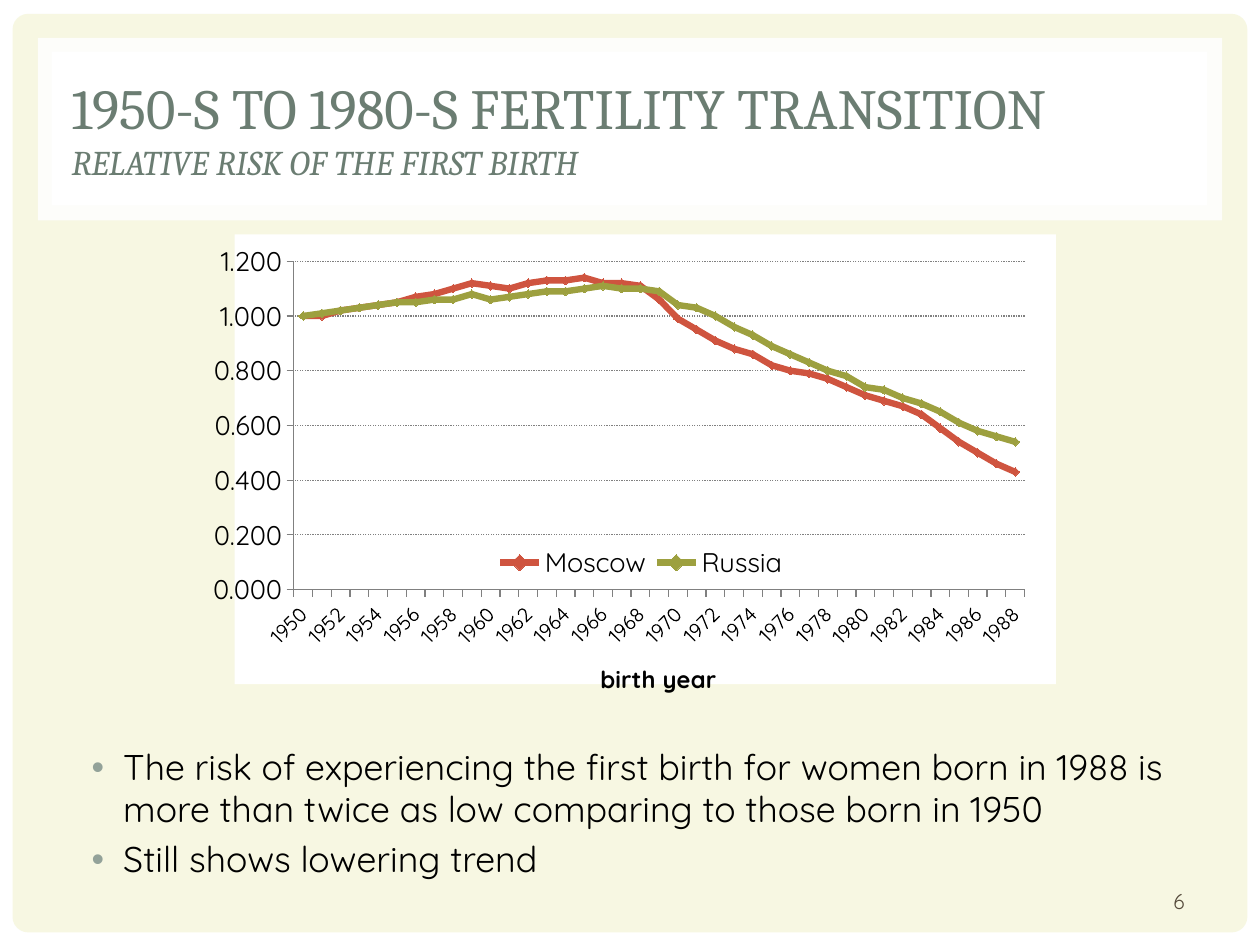
from lxml import etree
from pptx import Presentation
from pptx.chart.data import CategoryChartData
from pptx.dml.color import RGBColor
from pptx.enum.chart import XL_CHART_TYPE as ChartType, XL_LEGEND_POSITION as LegendPosition
from pptx.enum.chart import XL_MARKER_STYLE as Marker, XL_TICK_MARK as Tick
from pptx.enum.dml import MSO_LINE as Dash
from pptx.enum.shapes import MSO_SHAPE as Shape
from pptx.enum.text import MSO_ANCHOR as Anchor, PP_ALIGN as Align
from pptx.oxml import parse_xml
from pptx.oxml.ns import nsdecls, qn
from pptx.util import Inches, Pt

COLORS = {
    "white": "FFFFFF", "cream": "F2F3D0", "heading": "6B7D72", "text": "000000",
    "bullet": "93A299", "number": "564B3C", "grid": "808080",
    "Moscow": "CF543F", "Russia": "9DA03F",
}
HEADING_FONT, BODY_FONT = "Cambria", "Quicksand"
BIRTH_YEARS = [float(year) for year in range(1950, 1989)]
RISKS = {
    "Moscow": [1, 1, 1.02, 1.03, 1.04, 1.05, 1.07, 1.08, 1.1, 1.12, 1.11, 1.1, 1.12,
               1.13, 1.13, 1.14, 1.12, 1.12, 1.11, 1.06, 0.99, 0.95, 0.91, 0.88, 0.86,
               0.82, 0.8, 0.79, 0.77, 0.74, 0.71, 0.69, 0.67, 0.64, 0.59, 0.54, 0.5,
               0.46, 0.43],
    "Russia": [1, 1.01, 1.02, 1.03, 1.04, 1.05, 1.05, 1.06, 1.06, 1.08, 1.06, 1.07, 1.08,
               1.09, 1.09, 1.1, 1.11, 1.1, 1.1, 1.09, 1.04, 1.03, 1, 0.96, 0.93, 0.89,
               0.86, 0.83, 0.8, 0.78, 0.74, 0.73, 0.7, 0.68, 0.65, 0.61, 0.58, 0.56, 0.54],
}
FINDINGS = [
    "The risk of experiencing the first birth for women born in 1988 is "
    "more than twice as low comparing to those born in 1950",
    "Still shows lowering trend",
]


def rgb(name):
    """Return the named colour."""
    return RGBColor.from_string(COLORS[name])


def style(font, size, color="text", name=BODY_FONT):
    """Set the size, colour and typeface of a font."""
    font.size, font.name = Pt(size), name
    font.color.rgb = rgb(color)


def add_panel(slide, box, color, opacity=100, kind=Shape.RECTANGLE):
    """Add a borderless filled panel."""
    panel = slide.shapes.add_shape(kind, *map(Inches, box))
    panel.shadow.inherit = False
    panel.line.fill.background()
    panel.fill.solid()
    panel.fill.fore_color.rgb = rgb(color)
    if opacity < 100:
        tint = panel.fill._xPr.find(".//" + qn("a:srgbClr"))
        etree.SubElement(tint, qn("a:alpha"), val=str(opacity * 1000))
    return panel


def add_text(slide, box, text, anchor=Anchor.TOP):
    """Add a wrapping text box and return its frame."""
    frame = slide.shapes.add_textbox(*map(Inches, box)).text_frame
    frame.word_wrap = True
    frame.vertical_anchor = anchor
    frame.text = text
    return frame


def add_backdrop(slide, width, height):
    """Draw the white page and the rounded cream sheet."""
    add_panel(slide, (0, 0, width, height), "white")
    sheet = add_panel(slide, (0.1, 0.11, width - 0.2, height - 0.21), "cream", 60,
                      Shape.ROUNDED_RECTANGLE)
    sheet.adjustments[0] = 0.017


def add_heading(slide, left, top, width, height):
    """Draw the framed heading with its subtitle."""
    add_panel(slide, (left, top, width, height), "white", 83)
    add_panel(slide, (left + 0.11, top + 0.11, width - 0.23, height - 0.23), "white")
    frame = add_text(slide, (left + 0.17, top + 0.14, width - 0.37, height - 0.31),
                     "1950-S TO 1980-S FERTILITY TRANSITION\vRELATIVE RISK OF THE FIRST BIRTH",
                     Anchor.MIDDLE)
    title, subtitle = frame.paragraphs[0].runs
    style(title.font, 32.4, "heading", HEADING_FONT)
    style(subtitle.font, 19.8, "heading", HEADING_FONT)
    subtitle.font.italic = True


def manual_layout(x, y, size=None, inner=False):
    """Build a chart layout from fractions of the chart area."""
    target = '<c:layoutTarget val="inner"/>' if inner else ""
    extent = '<c:w val="{}"/><c:h val="{}"/>'.format(*size) if size else ""
    return parse_xml(
        f'<c:layout {nsdecls("c")}><c:manualLayout>{target}'
        f'<c:xMode val="edge"/><c:yMode val="edge"/><c:x val="{x}"/><c:y val="{y}"/>'
        f'{extent}</c:manualLayout></c:layout>')


def place(part, layout, after=None):
    """Give a chart part a layout, as first child or after the named one."""
    for previous in part.findall(qn("c:layout")):
        part.remove(previous)
    if after:
        part.find(qn(after)).addnext(layout)
    else:
        part.insert(0, layout)


def format_axes(chart):
    """Format the birth year and risk axes."""
    years, risk = chart.category_axis, chart.value_axis
    for axis, size, pattern in ((years, 12, "General"), (risk, 16, "0.000")):
        axis.major_tick_mark, axis.minor_tick_mark = Tick.OUTSIDE, Tick.NONE
        style(axis.tick_labels.font, size)
        axis.tick_labels.number_format = pattern
        axis.tick_labels.number_format_is_linked = True
        axis.format.line.color.rgb = rgb("grid")
        axis.format.line.width = Pt(0.75)
    years.has_major_gridlines = False
    years.axis_title.text_frame.text = "birth year"
    caption = years.axis_title.text_frame.paragraphs[0].runs[0].font
    style(caption, 14)
    caption.bold = True
    place(years.axis_title._element, manual_layout(0.44, 0.94), "c:tx")
    years._element.find(qn("c:txPr")).find(qn("a:bodyPr")).set("rot", "-2700000")
    skip = parse_xml(f'<c:tickLblSkip {nsdecls("c")} val="2"/>')
    years._element.find(qn("c:noMultiLvlLbl")).addprevious(skip)
    risk.minimum_scale, risk.maximum_scale, risk.major_unit = 0, 1.2, 0.2
    gridline = risk.major_gridlines.format.line
    gridline.color.rgb = rgb("grid")
    gridline.width = Pt(0.75)
    gridline.dash_style = Dash.ROUND_DOT


def add_risk_chart(slide, left, top, width, height):
    """Draw the relative risk of the first birth by birth year."""
    data = CategoryChartData(number_format="General")
    data.categories = BIRTH_YEARS
    for region, values in RISKS.items():
        data.add_series(region, values)
    chart = slide.shapes.add_chart(ChartType.LINE_MARKERS, Inches(left), Inches(top),
                                   Inches(width), Inches(height), data).chart
    chart.has_title = False
    style(chart.font, 10)
    format_axes(chart)
    chart.plots[0].vary_by_categories = False
    for series in chart.plots[0].series:
        series.smooth = False
        series.format.line.color.rgb = rgb(series.name)
        series.format.line.width = Pt(3.75)
        series.marker.style, series.marker.size = Marker.DIAMOND, 5
        series.marker.format.fill.solid()
        series.marker.format.fill.fore_color.rgb = rgb(series.name)
        series.marker.format.line.fill.background()

    chart.has_legend = True
    chart.legend.position = LegendPosition.BOTTOM
    chart.legend.include_in_layout = False
    style(chart.legend.font, 16)
    place(chart._chartSpace.find(".//" + qn("c:plotArea")),
          manual_layout(0.072, 0.06, (0.89, 0.73), inner=True))
    place(chart.legend._element, manual_layout(0.31, 0.68, (0.37, 0.1)), "c:legendPos")
    ground = parse_xml(
        f'<c:spPr {nsdecls("c", "a")}><a:solidFill><a:srgbClr val="{COLORS["white"]}"/>'
        '</a:solidFill><a:ln><a:noFill/></a:ln></c:spPr>')
    chart._chartSpace.find(qn("c:chart")).addnext(ground)


def add_findings(slide, left, top, width, height):
    """Write the bulleted findings."""
    frame = add_text(slide, (left, top, width, height), "\n".join(FINDINGS))
    for finding in frame.paragraphs:
        finding.space_before = Pt(4.5)
        finding.line_spacing = 0.98
        style(finding.runs[0].font, 20.4)
        props = finding._p.get_or_add_pPr()
        props.set("marL", str(Inches(0.38)))
        props.set("indent", str(Inches(-0.25)))
        color = etree.SubElement(props, qn("a:buClr"))
        etree.SubElement(color, qn("a:srgbClr"), val=COLORS["bullet"])
        etree.SubElement(props, qn("a:buFont"), typeface="Arial")
        etree.SubElement(props, qn("a:buChar"), char="•")


def add_page_number(slide, left, top, width, height):
    """Write the page number at the right."""
    frame = add_text(slide, (left, top, width, height), "6", Anchor.MIDDLE)
    frame.paragraphs[0].alignment = Align.RIGHT
    style(frame.paragraphs[0].runs[0].font, 12, "number")


def main():
    """Build and save the slide."""
    deck = Presentation()
    deck.slide_width, deck.slide_height = Inches(10), Inches(7.5)
    slide = deck.slides.add_slide(deck.slide_layouts[6])
    add_backdrop(slide, 10, 7.5)
    add_heading(slide, 0.3, 0.3, 9.4, 1.45)
    add_findings(slide, 0.5, 5.88, 9, 1.34)
    add_page_number(slide, 7.17, 6.95, 2.33, 0.4)
    add_risk_chart(slide, 1.69, 1.86, 6.69, 3.71)
    deck.save("out.pptx")


if __name__ == "__main__":
    main()
